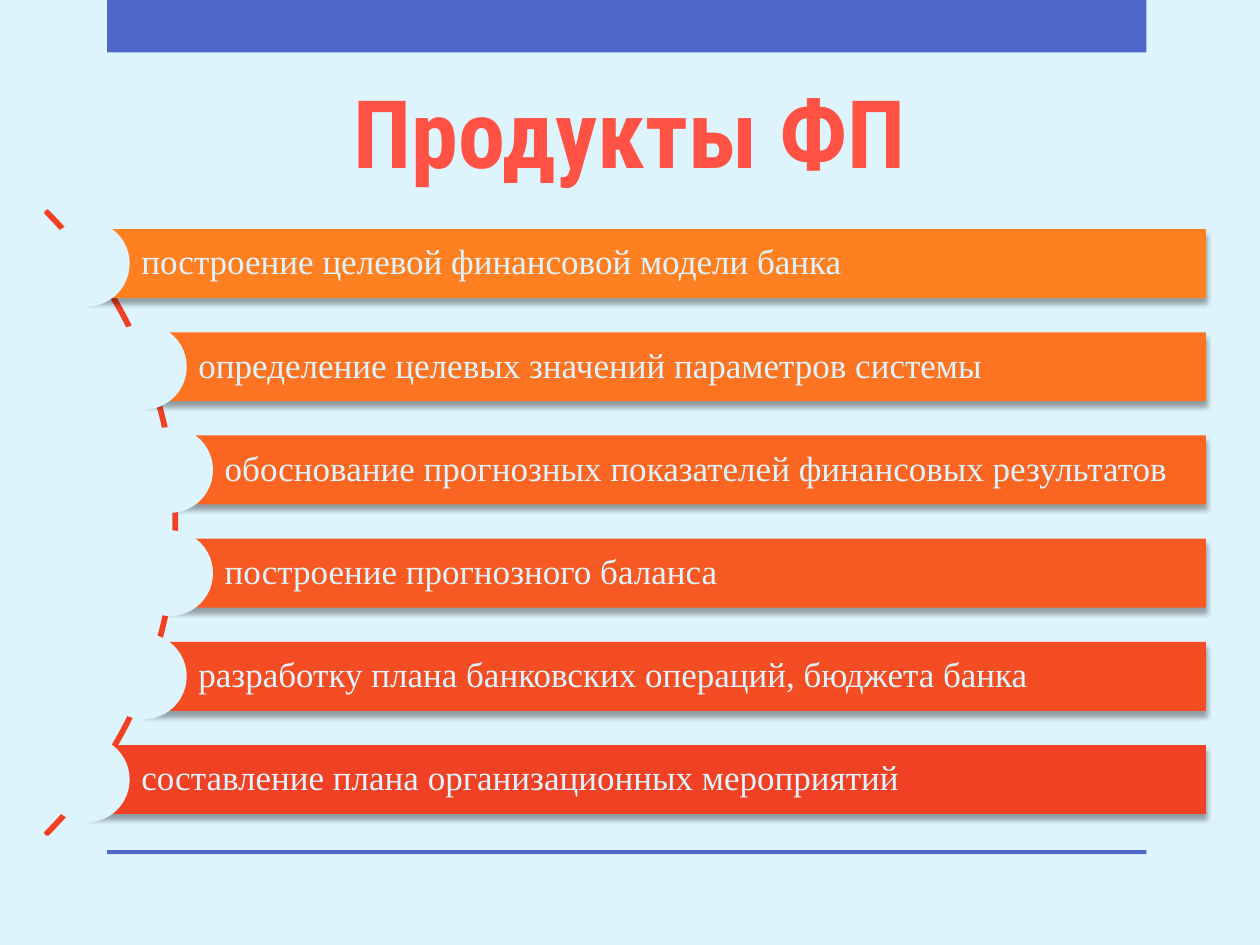
from lxml import etree
from pptx import Presentation
from pptx import util as u
from pptx.dml.color import RGBColor
from pptx.enum import shapes, text
from pptx.oxml import ns

BACKGROUND = "DEF4FC"
BLUE = "4E67C8"
RED = "F14124"
color = RGBColor.from_string


def add_filled(slide, kind, left, top, width, height, fill):
    shape = slide.shapes.add_shape(kind, u.Cm(left), u.Cm(top), u.Cm(width), u.Cm(height))
    shape.shadow.inherit = False
    shape.fill.solid()
    shape.fill.fore_color.rgb = color(fill)
    shape.line.fill.background()
    return shape


def write(shape, words, font, size, fill, bold=False, align=text.PP_ALIGN.LEFT,
          anchor=text.MSO_ANCHOR.MIDDLE, spacing=1.0, insets=(0.25, 0.13, 0.25, 0.13)):
    frame = shape.text_frame
    frame.word_wrap = True
    frame.vertical_anchor = anchor
    frame.margin_left, frame.margin_top, frame.margin_right, frame.margin_bottom = map(u.Cm, insets)
    paragraph = frame.paragraphs[0]
    paragraph.alignment = align
    paragraph.line_spacing = spacing
    run = paragraph.add_run()
    run.text = words
    run.font.name = font
    run.font.size = u.Pt(size)
    run.font.bold = bold
    run.font.color.rgb = color(fill)


presentation = Presentation()
presentation.slide_width = u.Cm(25.4)
presentation.slide_height = u.Cm(19.05)
slide = presentation.slides.add_slide(presentation.slide_layouts[6])
slide.background.fill.solid()
slide.background.fill.fore_color.rgb = color(BACKGROUND)

# Top band and bottom rule
for top, height in ((0, 1.06), (17.14, 0.08)):
    add_filled(slide, shapes.MSO_SHAPE.RECTANGLE, 2.16, top, 20.95, height, BLUE)

# Title
title = slide.shapes.add_textbox(u.Cm(0), u.Cm(1.12), u.Cm(25.4), u.Cm(2.79))
write(title, "Продукты ФП", "Roboto Condensed", 54, "FF5244", bold=True,
      align=text.PP_ALIGN.CENTER, anchor=text.MSO_ANCHOR.BOTTOM)

# Arc that the list follows
arc = add_filled(slide, shapes.MSO_SHAPE.BLOCK_ARC, -14.22, 1.65, 17.78, 17.78, RED)
arc.adjustments[0], arc.adjustments[1], arc.adjustments[2] = 189, 27, 0.003
arc.fill.background()
arc.line.color.rgb = color(RED)
arc.line.width = u.Pt(1.75)

# Bars, each with a circle centred on its left edge
products = [
    ("построение целевой финансовой модели банка", 1.75, "FF8021"),
    ("определение целевых значений параметров системы", 2.9, "FC7321"),
    ("обоснование прогнозных показателей финансовых результатов", 3.43, "FA6622"),
    ("построение прогнозного баланса", 3.43, "F75923"),
    ("разработку плана банковских операций, бюджета банка", 2.9, "F44D23"),
    ("составление плана организационных мероприятий", 1.75, RED),
]
first_top, pitch, bar_height, right_edge, diameter = 4.62, 2.08, 1.39, 24.31, 1.73

for index, (words, left, fill) in enumerate(products):
    top = first_top + index * pitch
    bar = add_filled(slide, shapes.MSO_SHAPE.RECTANGLE, left, top, right_edge - left, bar_height, fill)
    write(bar, words, "Times New Roman", 20, BACKGROUND, spacing=0.9,
          insets=(1.1, 0.15, 0.15, 0.15))

    # Soft shadow straight below the bar
    effects = bar._element.spPr.find(ns.qn("a:effectLst"))
    shadow = etree.SubElement(effects, ns.qn("a:outerShdw"), blurRad=str(u.Pt(3)),
                              dist=str(u.Pt(3)), dir="5400000", rotWithShape="0")
    shade = etree.SubElement(shadow, ns.qn("a:srgbClr"), val="000000")
    etree.SubElement(shade, ns.qn("a:alpha"), val="35000")

    add_filled(slide, shapes.MSO_SHAPE.OVAL, left - diameter / 2,
               top + (bar_height - diameter) / 2, diameter, diameter, BACKGROUND)

presentation.save("out.pptx")
